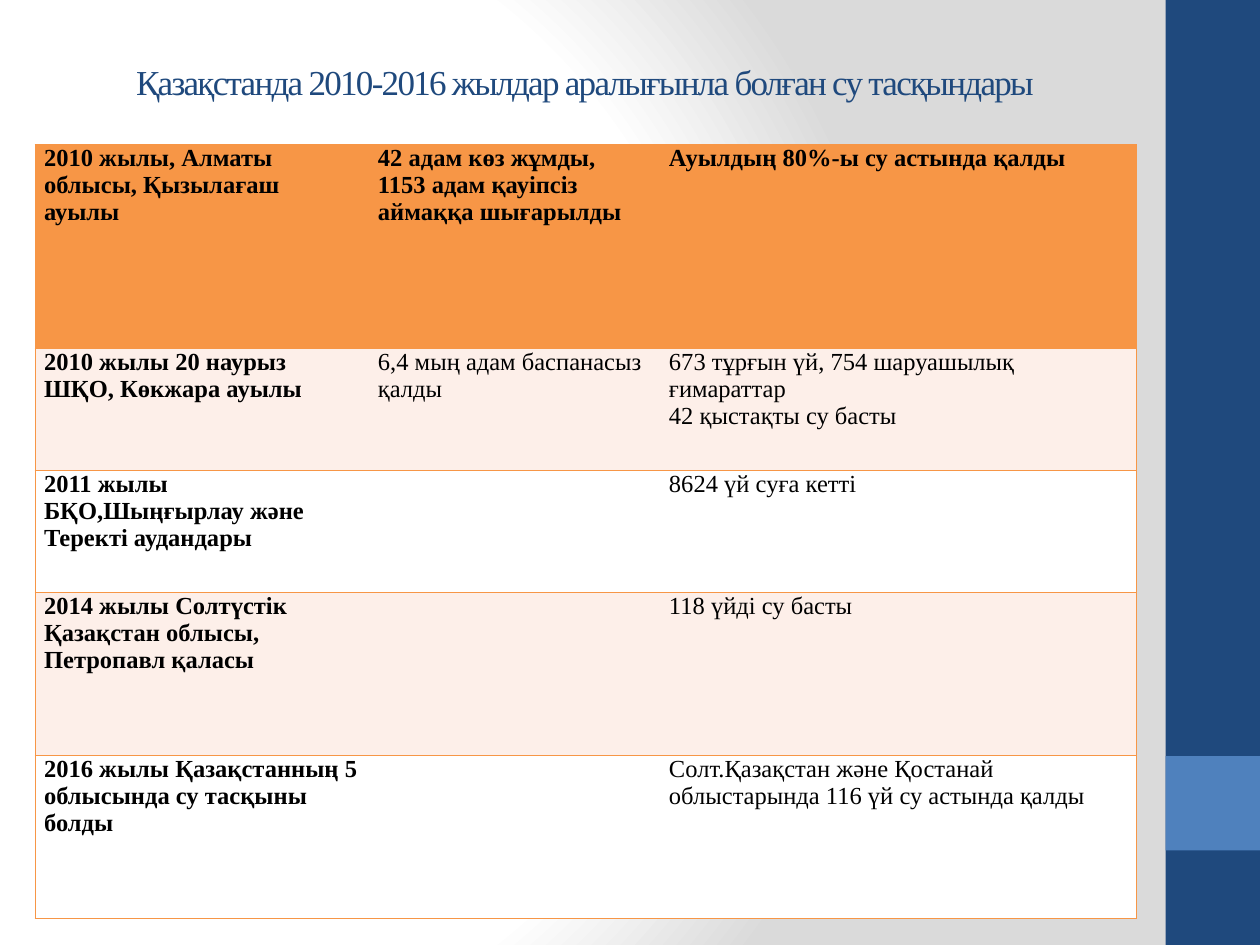
import dataclasses
import typing

import lxml.etree
import pptx
import pptx.dml.color
import pptx.enum.text
import pptx.oxml
import pptx.oxml.ns
import pptx.util

NAMESPACE = 'xmlns:a="http://schemas.openxmlformats.org/drawingml/2006/main"'


@dataclasses.dataclass(frozen=True)
class Theme:
    font: str = "Times New Roman"
    title_size: float = 20
    body_size: float = 14
    border_width: float = 1
    navy: str = "1F497D"
    blue: str = "4F81BD"
    orange: str = "F79646"
    peach: str = "FDEFE9"
    white: str = "FFFFFF"
    grey: str = "DADADA"
    black: str = "000000"


@dataclasses.dataclass(frozen=True)
class Area:
    left: float
    top: float
    width: float
    height: float

    def place(self) -> tuple[int, int, int, int]:
        return (
            round(self.left * WIDTH),
            round(self.top * HEIGHT),
            round(self.width * WIDTH),
            round(self.height * HEIGHT),
        )


@dataclasses.dataclass(frozen=True)
class Flood:
    place: str
    people: str
    damage: str
    row_units: int


THEME = Theme()
WIDTH = pptx.util.Inches(10)
HEIGHT = pptx.util.Inches(7.5)
ROW_UNIT = pptx.util.Inches(6.14 / 19)
COLUMN_INCHES = (2.65, 2.31, 3.78)
SIDE_BAR = Area(0.925, 0, 0.075, 1)
SIDE_ACCENT = Area(0.925, 0.8, 0.075, 0.1)
TITLE_AREA = Area(0.098, 0.028, 0.785, 0.116)
TABLE_AREA = Area(0.028, 0.1533, 0.874, 0.8187)

TITLE = "Қазақстанда 2010-2016 жылдар аралығынла болған су тасқындары"
FLOODS = (
    Flood(
        "2010 жылы, Алматы облысы, Қызылағаш ауылы",
        "42 адам көз жұмды,\n1153 адам қауіпсіз аймаққа шығарылды",
        "Ауылдың 80%-ы су астында қалды",
        5,
    ),
    Flood(
        "2010 жылы 20 наурыз\nШҚО, Көкжара ауылы",
        "6,4 мың адам баспанасыз қалды",
        "673 тұрғын үй, 754 шаруашылық ғимараттар\n42 қыстақты су басты",
        3,
    ),
    Flood("2011 жылы БҚО,Шыңғырлау және Теректі аудандары", "", "8624 үй суға кетті", 3),
    Flood("2014 жылы Солтүстік Қазақстан облысы, Петропавл қаласы", "", "118 үйді су басты", 4),
    Flood(
        "2016 жылы Қазақстанның 5 облысында су тасқыны болды",
        "",
        "Солт.Қазақстан және Қостанай облыстарында 116 үй су астында қалды",
        4,
    ),
)


def color(value: str) -> pptx.dml.color.RGBColor:
    return pptx.dml.color.RGBColor.from_string(value)


def write_text(
    frame: typing.Any,
    text: str,
    *,
    size: float,
    ink: str,
    bold: bool = False,
    spacing: float = 0,
) -> None:
    for index, line in enumerate(text.split("\n")):
        para = frame.add_paragraph() if index else frame.paragraphs[0]
        para.alignment = pptx.enum.text.PP_ALIGN.LEFT
        span = para.add_run()
        span.text = line
        span.font.name = THEME.font
        span.font.size = pptx.util.Pt(size)
        span.font.bold = bold
        span.font.color.rgb = color(ink)
        if spacing:
            span.font._element.set("spc", str(round(spacing * 100)))


def paint_background(page: typing.Any) -> None:
    fill = page.background.fill
    fill.gradient()
    old = page._element.find(".//" + pptx.oxml.ns.qn("a:gradFill"))
    stops = "".join(
        f'<a:gs pos="{share * 1000}"><a:srgbClr val="{value}"/></a:gs>'
        for share, value in ((0, THEME.white), (75, THEME.white), (100, THEME.grey))
    )
    gradient = pptx.oxml.parse_xml(
        f'<a:gradFill {NAMESPACE} rotWithShape="1"><a:gsLst>{stops}</a:gsLst>'
        '<a:path path="circle"><a:fillToRect l="20000" t="50000" r="100000" b="50000"/>'
        "</a:path></a:gradFill>"
    )
    old.getparent().replace(old, gradient)


def add_block(page: typing.Any, area: Area, fill: str) -> None:
    block = page.shapes.add_shape(pptx.enum.shapes.MSO_SHAPE.RECTANGLE, *area.place())
    block.shadow.inherit = False
    block.fill.solid()
    block.fill.fore_color.rgb = color(fill)
    block.line.fill.background()


def set_borders(cell: typing.Any, sides: str) -> None:
    properties = cell._tc.get_or_add_tcPr()
    width = pptx.util.Pt(THEME.border_width)
    for index, side in enumerate("LRTB"):
        paint = (
            f'<a:solidFill><a:srgbClr val="{THEME.orange}"/></a:solidFill>'
            if side in sides
            else "<a:noFill/>"
        )
        border = f'<a:ln{side} {NAMESPACE} w="{width}">{paint}</a:ln{side}>'
        properties.insert(index, pptx.oxml.parse_xml(border))


def add_flood_table(page: typing.Any) -> None:
    table = page.shapes.add_table(
        len(FLOODS), len(COLUMN_INCHES), *TABLE_AREA.place()
    ).table
    for column, inches in zip(table.columns, COLUMN_INCHES):
        column.width = pptx.util.Inches(inches)
    for row, flood in enumerate(FLOODS):
        table.rows[row].height = ROW_UNIT * flood.row_units
        fill = THEME.orange if row == 0 else (THEME.peach if row % 2 else THEME.white)
        for column, text in enumerate((flood.place, flood.people, flood.damage)):
            cell = table.cell(row, column)
            cell.margin_left = cell.margin_right = pptx.util.Inches(0.07)
            cell.margin_top = cell.margin_bottom = 0
            cell.fill.solid()
            cell.fill.fore_color.rgb = color(fill)
            set_borders(cell, ("LTB", "TB", "RTB")[column])
            if text:
                write_text(
                    cell.text_frame,
                    text,
                    size=THEME.body_size,
                    ink=THEME.black,
                    bold=row == 0 or column == 0,
                )


def main() -> None:
    deck = pptx.Presentation()
    deck.slide_width, deck.slide_height = WIDTH, HEIGHT
    page = deck.slides.add_slide(deck.slide_layouts.get_by_name("Title Only"))
    paint_background(page)
    add_block(page, SIDE_BAR, THEME.navy)
    add_block(page, SIDE_ACCENT, THEME.blue)
    title = page.shapes.title
    title.left, title.top, title.width, title.height = TITLE_AREA.place()
    title.text_frame.word_wrap = True
    title.text_frame.vertical_anchor = pptx.enum.text.MSO_ANCHOR.MIDDLE
    write_text(
        title.text_frame, TITLE, size=THEME.title_size, ink=THEME.navy, spacing=-1
    )
    add_flood_table(page)
    deck.save("out.pptx")


if __name__ == "__main__":
    main()
